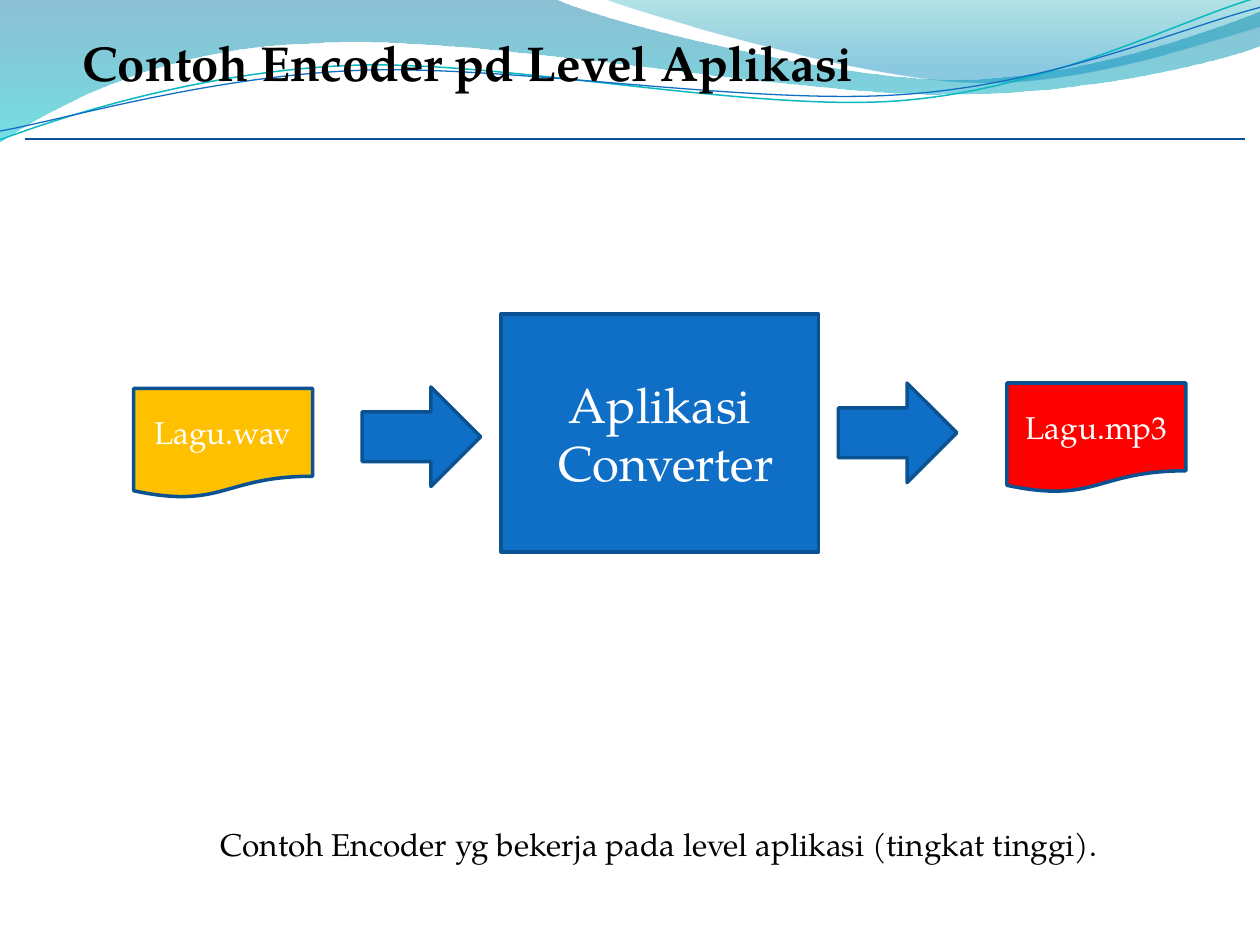
import math
import pptx
import pptx.util
import pptx.dml.color
import pptx.enum.shapes
import pptx.enum.text
import pptx.oxml.ns
import lxml.etree
from dataclasses import dataclass

Pt = pptx.util.Pt
qn = pptx.oxml.ns.qn
SHAPE = pptx.enum.shapes.MSO_SHAPE
ALIGN = pptx.enum.text.PP_ALIGN
ANCHOR = pptx.enum.text.MSO_ANCHOR
FIT = pptx.enum.text.MSO_AUTO_SIZE


@dataclass(frozen=True)
class Theme:
    font: str = "TeX Gyre Pagella"
    large: int = 28
    small: int = 18
    ink: str = "000000"
    paper: str = "FFFFFF"
    blue: str = "0F6FC6"
    outline: str = "0B5292"
    rule: str = "095295"
    teal: str = "0AB8BF"
    amber: str = "FFC000"
    red: str = "FF0000"


THEME = Theme()

TITLE = "Contoh Encoder pd Level Aplikasi"
CAPTION = "Contoh Encoder yg bekerja pada level aplikasi (tingkat tinggi)."

# Paths: a pair is a straight step, six numbers are a Bézier step.
# Gradient stops: position, colour, opacity in percent.
BANDS = [
    ([(0, 0), (316.8, -0.7), (342.7, 12.2, 478.1, 45.4, 545.8, 45.4),
      (614.2, 45.4, 689.8, 18.7, 720, 6.5), (720.7, 25.9),
      (707.8, 31.7, 626.4, 54.7, 537.1, 54),
      (447.8, 54, 275, 20.2, 185, 24.5),
      (92.9, 25.9, 33.1, 59.8, -0.7, 81.4), (0, 0)],
     [(0, "0074A1", 45), (1, "00C6CF", 55)]),
    ([(344.9, -0.7), (366.5, 7.9, 491, 44.6, 553.7, 46.8),
      (616.3, 49.7, 691.9, 23, 720, 15.1), (720, 0), (344.9, -0.7)],
     [(0, "00A1A9", 30), (0.8, "008BBF", 45)]),
]
STRAND_TILT = -2.7
STRANDS = [
    ([(0, 79.9), (34.6, 67, 113.8, 41, 199.4, 37.4),
      (284.4, 33.8, 427, 64.1, 513.4, 57.6),
      (599.8, 51.1, 675.4, 10.8, 718.6, -1.4)], THEME.teal, 0.85),
    ([(0, 74.9), (33.8, 69.1, 118.1, 43.9, 203.8, 40.3),
      (290.2, 36.7, 429.8, 60.5, 516.2, 54),
      (601.9, 48.2, 677.5, 15.1, 720, 4.3)], THEME.blue, 0.75),
]

ARROW_SIZE = (67.7, 56.9)
FILE_SIZE = (102.2, 62.6)
# Preset, left and top, size, fill, lines of text, type size
STEPS = [
    (SHAPE.RECTANGLE, (286.3, 179.3), (181.4, 136.1), THEME.blue,
     ["Aplikasi", " Converter"], THEME.large),
    (SHAPE.RIGHT_ARROW, (207, 221.1), ARROW_SIZE, THEME.blue, [], THEME.small),
    (SHAPE.RIGHT_ARROW, (479.1, 218.9), ARROW_SIZE, THEME.blue, [], THEME.small),
    (SHAPE.FLOWCHART_DOCUMENT, (76.4, 222), FILE_SIZE, THEME.amber,
     ["Lagu.wav"], THEME.small),
    (SHAPE.FLOWCHART_DOCUMENT, (575.4, 218.9), FILE_SIZE, THEME.red,
     ["Lagu.mp3"], THEME.small),
]


def rgb(code):
    return pptx.dml.color.RGBColor.from_string(code)


def turn(x, y, degrees):
    """Turn a point clockwise about the page's top left corner."""
    angle = math.radians(degrees)
    return (x * math.cos(angle) - y * math.sin(angle),
            x * math.sin(angle) + y * math.cos(angle))


def draw_path(page, path, closed, tilt=0):
    """Draw a path of straight and Bézier steps in a frame tilted by some degrees."""
    steps = [[tuple(map(Pt, turn(*step[i:i + 2], -tilt))) for i in range(0, len(step), 2)]
             for step in path]
    builder = page.shapes.build_freeform(*steps[0][0], scale=1.0)
    builder.add_line_segments([step[-1] for step in steps[1:]], close=closed)
    shape = builder.convert_to_shape()
    shape.shadow.inherit = False

    lines = list(shape.element.spPr.iter(qn("a:lnTo")))
    for line, step in zip(lines, steps[1:]):
        if len(step) == 1:
            continue
        curve = lxml.etree.Element(qn("a:cubicBezTo"))
        for x, y in step:
            point = lxml.etree.SubElement(curve, qn("a:pt"))
            point.set("x", str(x - shape.left))
            point.set("y", str(y - shape.top))
        line.getparent().replace(line, curve)

    if tilt:
        half_width, half_height = shape.width / 2, shape.height / 2
        x, y = turn(shape.left + half_width, shape.top + half_height, tilt)
        shape.left, shape.top = round(x - half_width), round(y - half_height)
        shape.rotation = tilt
    return shape


def draw_waves(page):
    for path, stops in BANDS:
        band = draw_path(page, path, True)
        band.line.fill.background()
        band.fill.gradient()
        band.fill.gradient_angle = 270
        for stop, (position, colour, _) in zip(band.fill.gradient_stops, stops):
            stop.position = position
            stop.color.rgb = rgb(colour)
        colours = list(band.element.spPr.iter(qn("a:srgbClr")))
        for colour, (_, _, opacity) in zip(colours, stops):
            alpha = lxml.etree.SubElement(colour, qn("a:alpha"))
            alpha.set("val", str(opacity * 1000))
    for path, colour, width in STRANDS:
        strand = draw_path(page, path, False, STRAND_TILT)
        strand.fill.background()
        set_line(strand, colour, width)


def set_line(shape, colour, width):
    shape.line.color.rgb = rgb(colour)
    shape.line.width = Pt(width)


def place(shape, left, top, width, height):
    shape.left, shape.top = Pt(left), Pt(top)
    shape.width, shape.height = Pt(width), Pt(height)


def write(shape, lines, size, colour, align, anchor, fit=FIT.NONE, bold=False, spacing=None):
    frame = shape.text_frame
    frame.word_wrap = True
    frame.auto_size = fit
    frame.vertical_anchor = anchor
    frame.text = "\n".join(lines)
    for para in frame.paragraphs:
        para.alignment = align
        para.line_spacing = spacing
        para.font.name = THEME.font
        para.font.size = Pt(size)
        para.font.bold = bold
        para.font.color.rgb = rgb(colour)


def main():
    deck = pptx.Presentation()
    deck.slide_width, deck.slide_height = Pt(720), Pt(540)
    page = deck.slides.add_slide(deck.slide_layouts.get_by_name("Title Only"))
    page.background.fill.solid()
    page.background.fill.fore_color.rgb = rgb(THEME.paper)

    draw_waves(page)

    rule = page.shapes.add_connector(
        pptx.enum.shapes.MSO_CONNECTOR.STRAIGHT, Pt(14.4), Pt(79.4), Pt(711.4), Pt(79.4))
    set_line(rule, THEME.rule, 0.75)
    lxml.etree.SubElement(rule.element.spPr, qn("a:effectLst"))

    caption = page.shapes.add_textbox(Pt(54), Pt(457.2), Pt(645.1), Pt(40.3))
    write(caption, [CAPTION], THEME.small, THEME.ink, ALIGN.CENTER, ANCHOR.TOP,
          FIT.SHAPE_TO_FIT_TEXT, spacing=1.5)

    title = page.shapes.title
    title.element.getparent().append(title.element)  # in front of the waves
    place(title, 40, 15.1, 745.2, 41)
    write(title, [TITLE], THEME.large, THEME.ink, ALIGN.LEFT, ANCHOR.TOP,
          FIT.SHAPE_TO_FIT_TEXT, bold=True)

    for preset, corner, size, fill, lines, type_size in STEPS:
        box = page.shapes.add_shape(preset, *map(Pt, corner + size))
        box.shadow.inherit = False
        box.fill.solid()
        box.fill.fore_color.rgb = rgb(fill)
        set_line(box, THEME.outline, 2)
        if lines:
            write(box, lines, type_size, THEME.paper, ALIGN.CENTER, ANCHOR.MIDDLE)

    deck.save("out.pptx")


if __name__ == "__main__":
    main()
